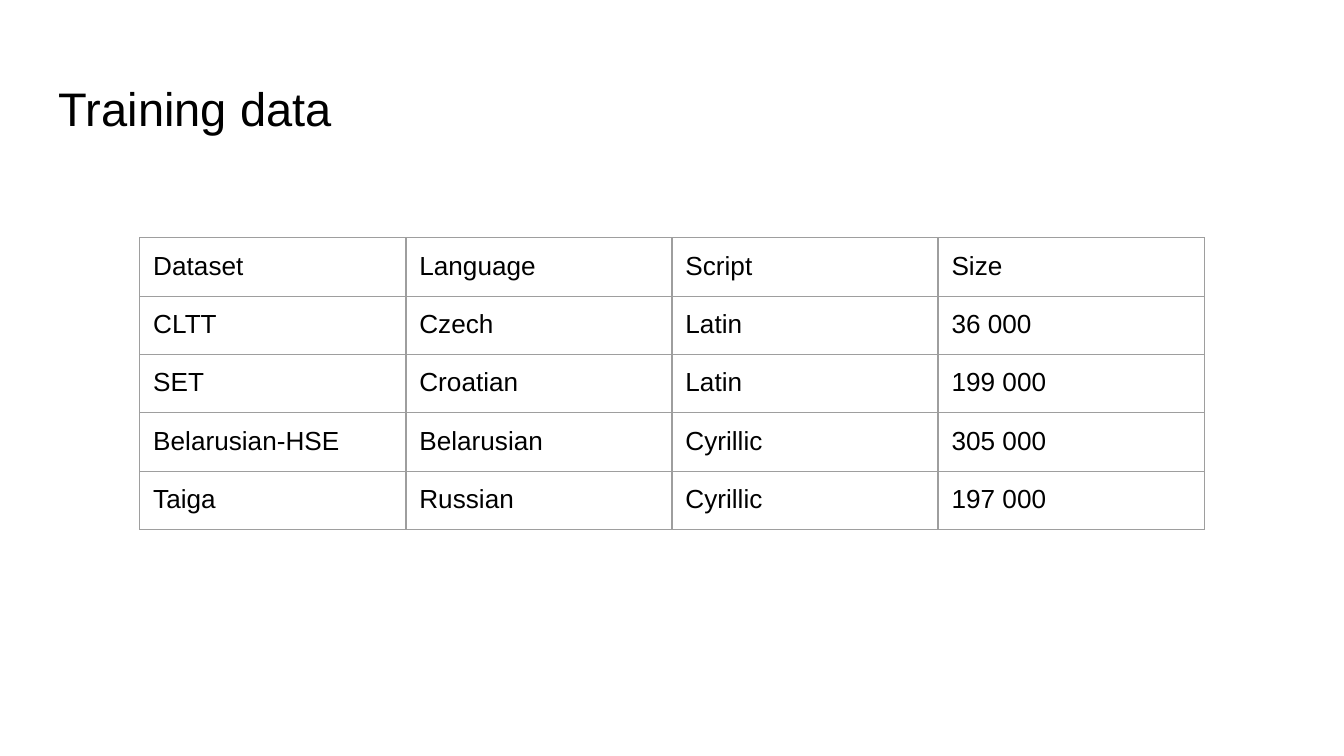
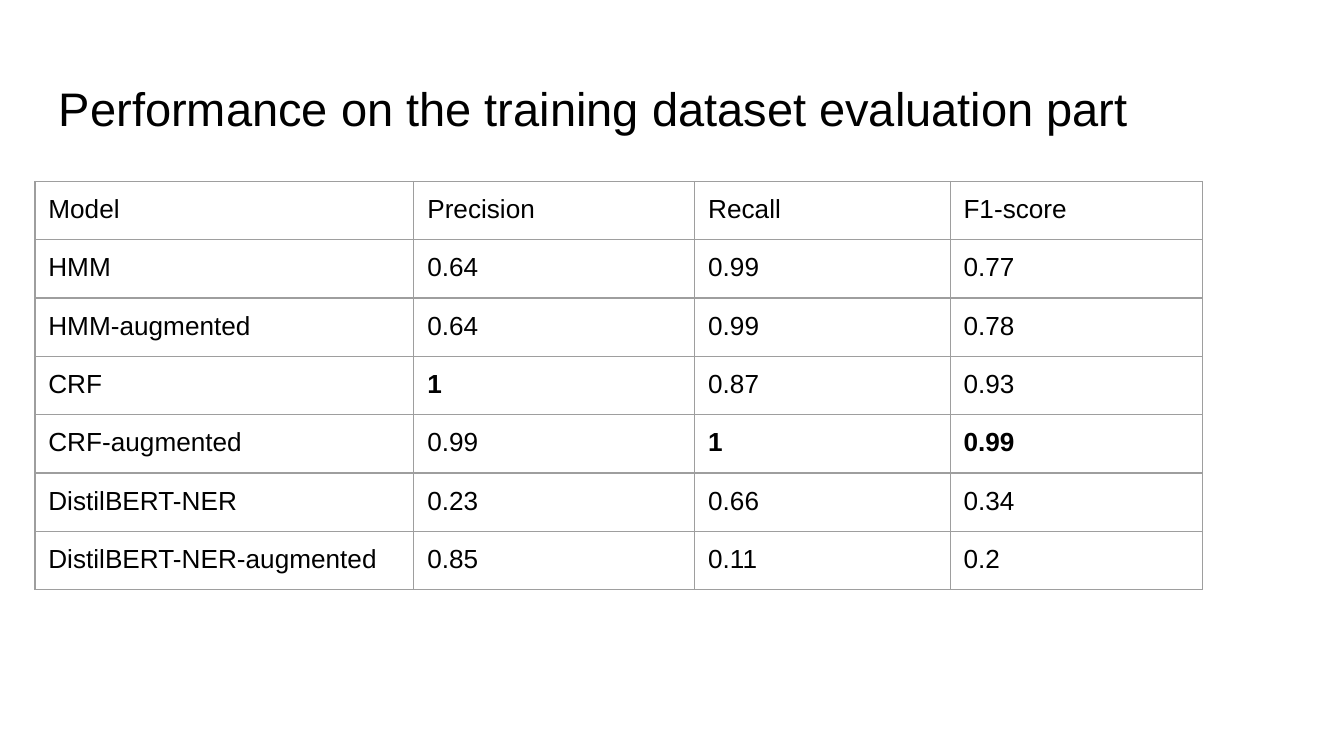
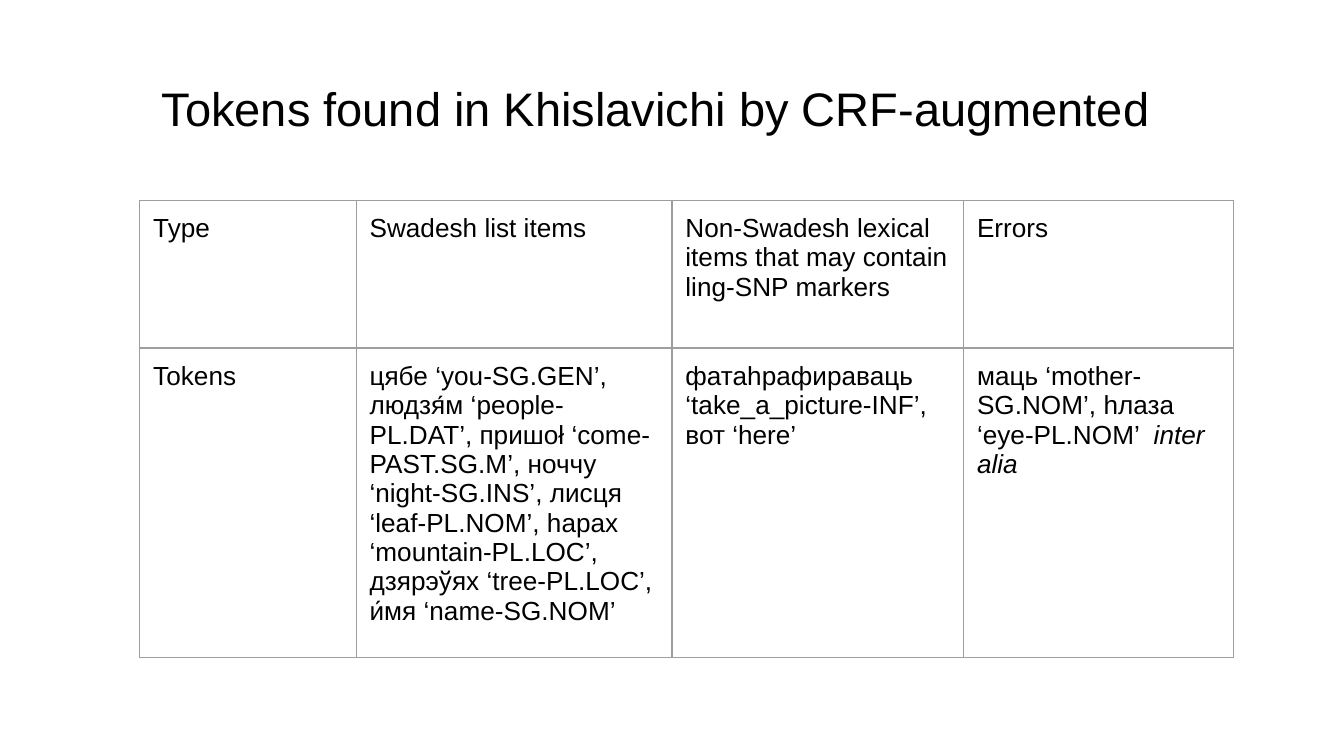
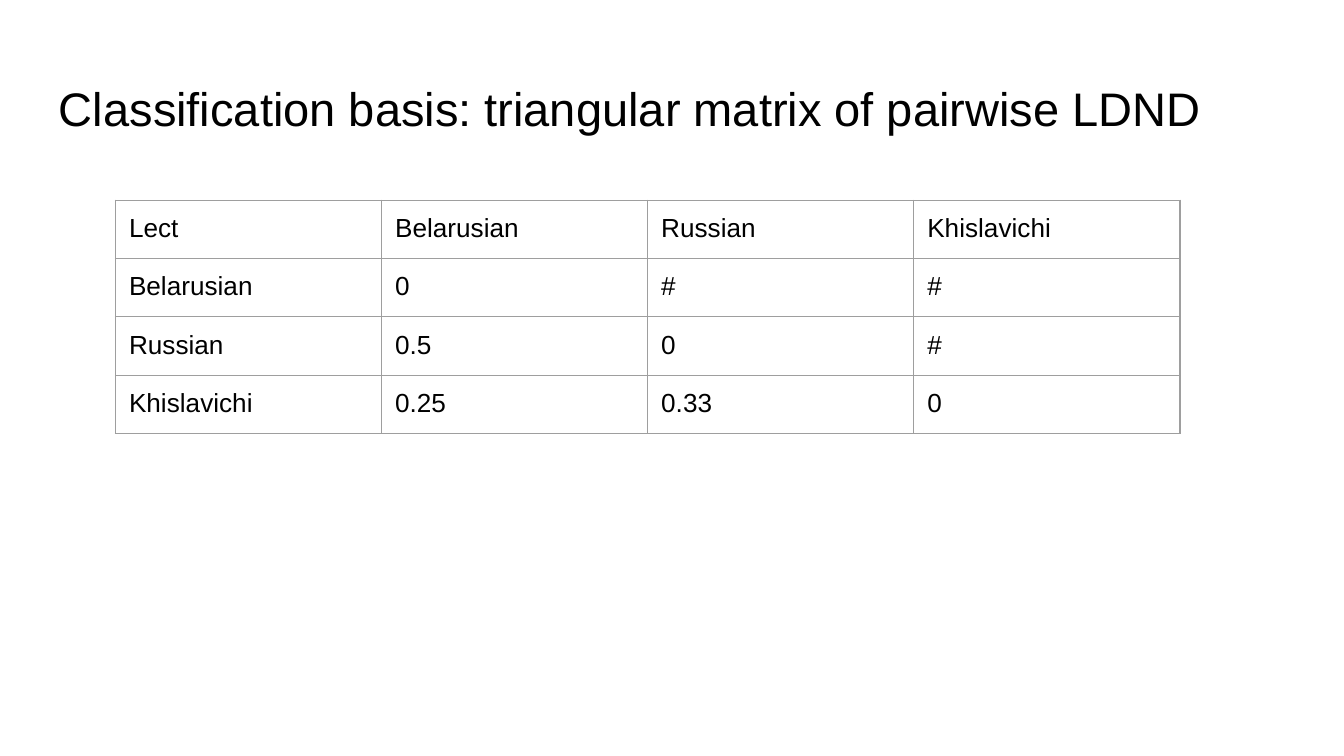
from collections import namedtuple

from lxml import etree
from pptx import Presentation
from pptx.dml.color import RGBColor
from pptx.enum.text import MSO_ANCHOR, PP_ALIGN
from pptx.oxml.ns import qn
from pptx.util import Inches, Pt

TOP = MSO_ANCHOR.TOP
LEFT = PP_ALIGN.LEFT
CENTER = PP_ALIGN.CENTER

BLACK = RGBColor(0x00, 0x00, 0x00)
GRID_GRAY = RGBColor(0x9E, 0x9E, 0x9E)
FONT = "Arial"
TITLE_SIZE = 25.2
CELL_SIZE = 14
INSET = Inches(0.1)
GRID_WIDTH = Pt(0.75)
FRAME_SIDE = 3.28

Box = namedtuple("Box", "left top width height")
Span = namedtuple("Span", "text bold italic", defaults=(False, False))

TITLE_BOX = Box(0.34, 0.49, 9.32, 0.63)
WIDE_TITLE_BOX = Box(0.1, 0.49, 9.56, 0.63)
EVEN_COLUMNS = [1.98] * 4

DATASETS = [
    ["Dataset", "Language", "Script", "Size"],
    ["CLTT", "Czech", "Latin", "36 000"],
    ["SET", "Croatian", "Latin", "199 000"],
    ["Belarusian-HSE", "Belarusian", "Cyrillic", "305 000"],
    ["Taiga", "Russian", "Cyrillic", "197 000"],
]

SCORES = [
    ["Model", "Precision", "Recall", "F1-score"],
    ["HMM", "0.64", "0.99", "0.77"],
    ["HMM-augmented", "0.64", "0.99", "0.78"],
    ["CRF", Span("1", bold=True), "0.87", "0.93"],
    ["CRF-augmented", "0.99", Span("1", bold=True), Span("0.99", bold=True)],
    ["DistilBERT-NER", "0.23", "0.66", "0.34"],
    ["DistilBERT-NER-augmented", "0.85", "0.11", "0.2"],
]

TOKENS = [
    [
        "Type",
        "Swadesh list items",
        "Non-Swadesh lexical items that may contain ling-SNP markers",
        "Errors",
    ],
    [
        "Tokens",
        "цябе ‘you-SG.GEN’, людзя́м ‘people-PL.DAT’, "
        "пришоł ‘come-PAST.SG.M’, ноччу ‘night-SG.INS’, "
        "лисця ‘leaf-PL.NOM’, hарах ‘mountain-PL.LOC’, "
        "дзярэўях ‘tree-PL.LOC’, и́мя ‘name-SG.NOM’",
        "фатаhрафираваць ‘take_a_picture-INF’, вот ‘here’",
        [
            Span("маць ‘mother-SG.NOM’, hлаза ‘eye-PL.NOM’  "),
            Span("inter alia", italic=True),
        ],
    ],
]

DISTANCES = [
    ["Lect", "Belarusian", "Russian", "Khislavichi"],
    ["Belarusian", "0", "#", "#"],
    ["Russian", "0.5", "0", "#"],
    ["Khislavichi", "0.25", "0.33", "0"],
]


def as_spans(content):
    if isinstance(content, list):
        return content
    return [content if isinstance(content, Span) else Span(content)]


def write_text(frame, content, size, align=LEFT):
    frame.word_wrap = True
    para = frame.paragraphs[0]
    para.alignment = align
    para.line_spacing = 1.0
    for span in as_spans(content):
        run = para.add_run()
        run.text = span.text
        run.font.size = Pt(size)
        run.font.bold = span.bold
        run.font.italic = span.italic
        run.font.color.rgb = BLACK
        run.font.name = FONT
        for script in ("a:ea", "a:cs"):
            etree.SubElement(run._r.get_or_add_rPr(), qn(script), typeface=FONT)


def set_insets(target):
    target.margin_left = target.margin_right = INSET
    target.margin_top = target.margin_bottom = INSET
    target.vertical_anchor = TOP


def add_title(page, text, box, align):
    frame = page.shapes.add_textbox(*map(Inches, box)).text_frame
    set_insets(frame)
    write_text(frame, text, TITLE_SIZE, align)


def draw_borders(cell):
    properties = cell._tc.get_or_add_tcPr()
    for side in ("a:lnL", "a:lnR", "a:lnT", "a:lnB"):
        line = etree.SubElement(properties, qn(side), w=str(GRID_WIDTH))
        fill = etree.SubElement(line, qn("a:solidFill"))
        etree.SubElement(fill, qn("a:srgbClr"), val=str(GRID_GRAY))


def add_grid(page, left, top, widths, heights, rows):
    box = Box(left, top, FRAME_SIDE, FRAME_SIDE)
    holder = page.shapes.add_table(len(rows), len(widths), *map(Inches, box))
    table = holder.table
    table.first_row = False
    table.horz_banding = False
    for column, width in zip(table.columns, widths):
        column.width = Inches(width)
    for row, height, contents in zip(table.rows, heights, rows):
        row.height = Inches(height)
        for cell, content in zip(row.cells, contents):
            set_insets(cell)
            draw_borders(cell)
            cell.fill.background()
            write_text(cell.text_frame, content, CELL_SIZE)
    holder.width = holder.height = Inches(FRAME_SIDE)


def add_table_page(deck, title, left, top, widths, heights, rows,
                   title_box=TITLE_BOX, align=LEFT):
    page = deck.slides.add_slide(deck.slide_layouts[6])
    add_title(page, title, title_box, align)
    add_grid(page, left, top, widths, heights, rows)


def main():
    deck = Presentation()
    deck.slide_width = Inches(10)
    deck.slide_height = deck.slide_width * 9 // 16
    add_table_page(deck, "Training data",
                   1.04, 1.77, EVEN_COLUMNS, [0.42] * 5, DATASETS)
    add_table_page(deck, "Performance on the training dataset evaluation part",
                   0.26, 1.35, [2.82, 2.09, 1.9, 1.88], [0.43] * 6 + [0.42], SCORES)
    add_table_page(deck, "Tokens found in Khislavichi by CRF-augmented",
                   1.04, 1.49, [1.61, 2.35, 2.17, 2.01], [1.1, 2.13], TOKENS,
                   WIDE_TITLE_BOX, CENTER)
    add_table_page(deck, "Classification basis: triangular matrix of pairwise LDND",
                   0.86, 1.49, EVEN_COLUMNS, [0.42] * 4, DISTANCES)
    deck.save("out.pptx")


if __name__ == "__main__":
    main()
